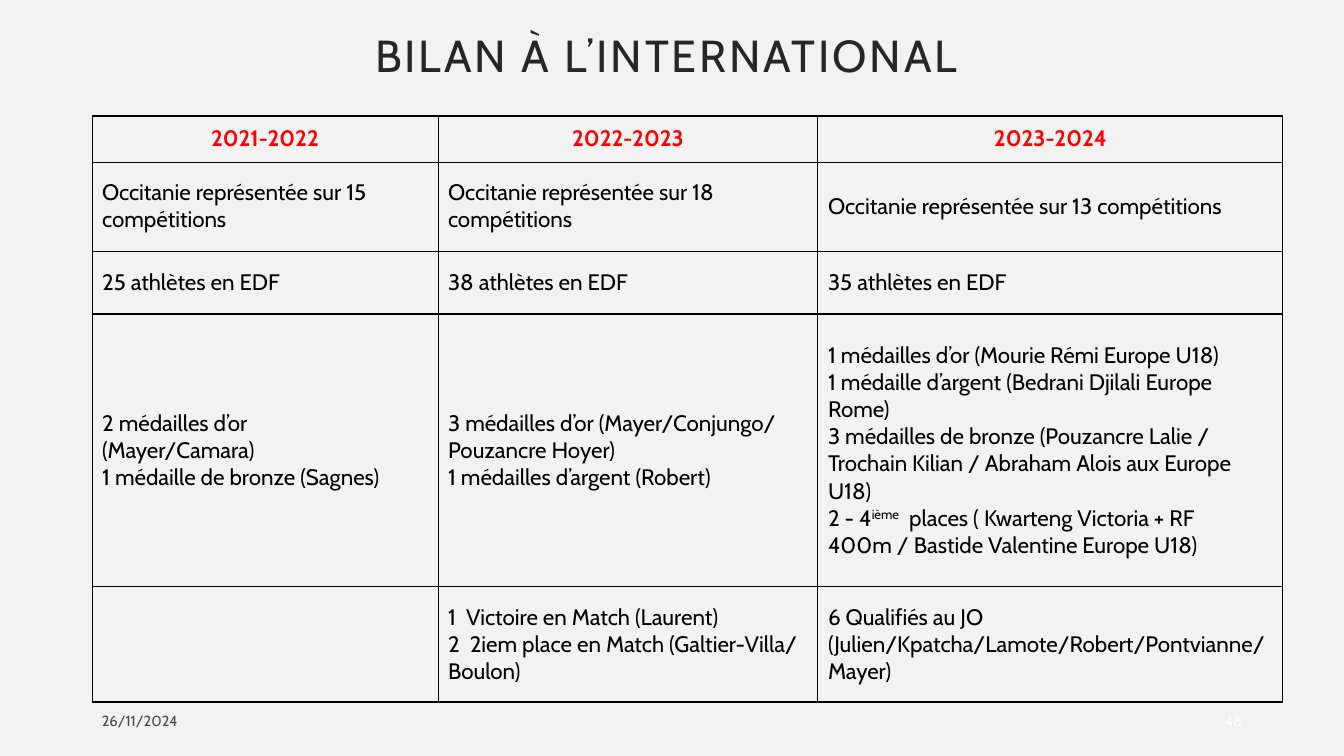
from lxml import etree
from pptx import Presentation
from pptx import util as u
from pptx.dml.color import RGBColor
from pptx.enum import text
from pptx.oxml.ns import qn

TITLE = "BILAN À L’INTERNATIONAL"
DATE = "26/11/2024"
PAGE = "48"
SEASONS = [
    ["2021-2022", "2022-2023", "2023-2024"],
    [
        "Occitanie représentée sur 15 compétitions",
        "Occitanie représentée sur 18 compétitions",
        "Occitanie représentée sur 13 compétitions",
    ],
    ["25 athlètes en EDF", "38 athlètes en EDF", "35 athlètes en EDF"],
    [
        "2 médailles d’or\v(Mayer/Camara)\n1 médaille de bronze (Sagnes)",
        "3 médailles d’or (Mayer/Conjungo/ Pouzancre Hoyer)\n"
        "1 médailles d’argent (Robert)",
        "1 médailles d’or (Mourie Rémi Europe U18)\n"
        "1 médaille d’argent (Bedrani Djilali Europe Rome)\n"
        "3 médailles de bronze (Pouzancre Lalie / Trochain Kilian / "
        "Abraham Alois aux Europe U18)\n"
        "2 - 4^ième^  places ( Kwarteng Victoria + RF 400m / "
        "Bastide Valentine Europe U18)",
    ],
    [
        "",
        "1  Victoire en Match (Laurent)\n"
        "2  2iem place en Match (Galtier-Villa/ Boulon)",
        "6 Qualifiés au JO (Julien/Kpatcha/Lamote/Robert/Pontvianne/ Mayer)",
    ],
]
COLUMN_WIDTHS = [346, 380, 465]
ROW_HEIGHTS = [46, 89, 63, 273, 115]
THICK_RULES = {0, 3, 5}

FONT = "Cabin"
BACKGROUND = RGBColor(0xF2, 0xF2, 0xF2)
INK = RGBColor(0x26, 0x26, 0x26)
BLACK = RGBColor(0, 0, 0)
GREY = RGBColor(0x49, 0x49, 0x49)
RED = RGBColor(0xFF, 0, 0)
WHITE = RGBColor(0xFF, 0xFF, 0xFF)


def px(n):
    return round(n * u.Inches(1) / 100.8)


def style(paragraph, size, color, align=text.PP_ALIGN.LEFT, bold=False):
    paragraph.alignment = align
    font = paragraph.font
    font.name, font.size, font.bold = FONT, u.Pt(size), bold
    font.color.rgb = color


def add_footer(slide, words, box, color, align):
    frame = slide.shapes.add_textbox(*map(px, box)).text_frame
    frame.word_wrap = True
    frame.vertical_anchor = text.MSO_ANCHOR.MIDDLE
    frame.text = words
    style(frame.paragraphs[0], 10.5, color, align)


def add_borders(cell, row):
    properties = cell._tc.get_or_add_tcPr()
    widths = {"lnL": 0.75, "lnR": 0.75}
    widths["lnT"] = 1.5 if row in THICK_RULES else 0.75
    widths["lnB"] = 1.5 if row + 1 in THICK_RULES else 0.75
    for side, width in widths.items():
        line = etree.SubElement(properties, qn("a:" + side), w=str(u.Pt(width)))
        fill = etree.SubElement(line, qn("a:solidFill"))
        etree.SubElement(fill, qn("a:srgbClr"), val=str(BLACK))


def fill_cell(cell, words, row):
    add_borders(cell, row)
    cell.fill.background()
    cell.vertical_anchor = text.MSO_ANCHOR.MIDDLE
    cell.text = words
    for paragraph in cell.text_frame.paragraphs:
        if "^" in paragraph.text:
            parts = paragraph.text.split("^")
            paragraph.clear()
            for i, part in enumerate(parts):
                run = paragraph.add_run()
                run.text = part
                if i % 2:
                    run.font._element.set("baseline", "30000")
        if row == 0:
            style(paragraph, 16, RED, text.PP_ALIGN.CENTER, True)
        else:
            style(paragraph, 16, BLACK)


def main():
    deck = Presentation()
    deck.slide_width, deck.slide_height = px(1344), px(756)
    slide = deck.slides.add_slide(deck.slide_layouts[5])
    slide.background.fill.solid()
    slide.background.fill.fore_color.rgb = BACKGROUND

    title = slide.shapes.title
    title.left, title.top, title.width, title.height = map(px, (141, 10, 1040, 95))
    title.text = TITLE
    title.text_frame.vertical_anchor = text.MSO_ANCHOR.MIDDLE
    heading = title.text_frame.paragraphs[0]
    heading.line_spacing = 0.9
    style(heading, 32, INK)
    heading._p.get_or_add_pPr().set("marL", str(px(224)))
    heading.runs[0].font._element.set("spc", "200")

    add_footer(slide, DATE, (92, 701, 302, 40), GREY, text.PP_ALIGN.LEFT)
    add_footer(slide, PAGE, (1151, 701, 101, 40), WHITE, text.PP_ALIGN.RIGHT)

    table = slide.shapes.add_table(
        len(SEASONS), len(COLUMN_WIDTHS), px(92), px(116),
        px(sum(COLUMN_WIDTHS)), px(sum(ROW_HEIGHTS)),
    ).table
    table.first_row = table.horz_banding = False
    for column, width in zip(table.columns, COLUMN_WIDTHS):
        column.width = px(width)
    for r, (height, cells) in enumerate(zip(ROW_HEIGHTS, SEASONS)):
        table.rows[r].height = px(height)
        for c, words in enumerate(cells):
            fill_cell(table.cell(r, c), words, r)

    deck.save("out.pptx")


if __name__ == "__main__":
    main()
